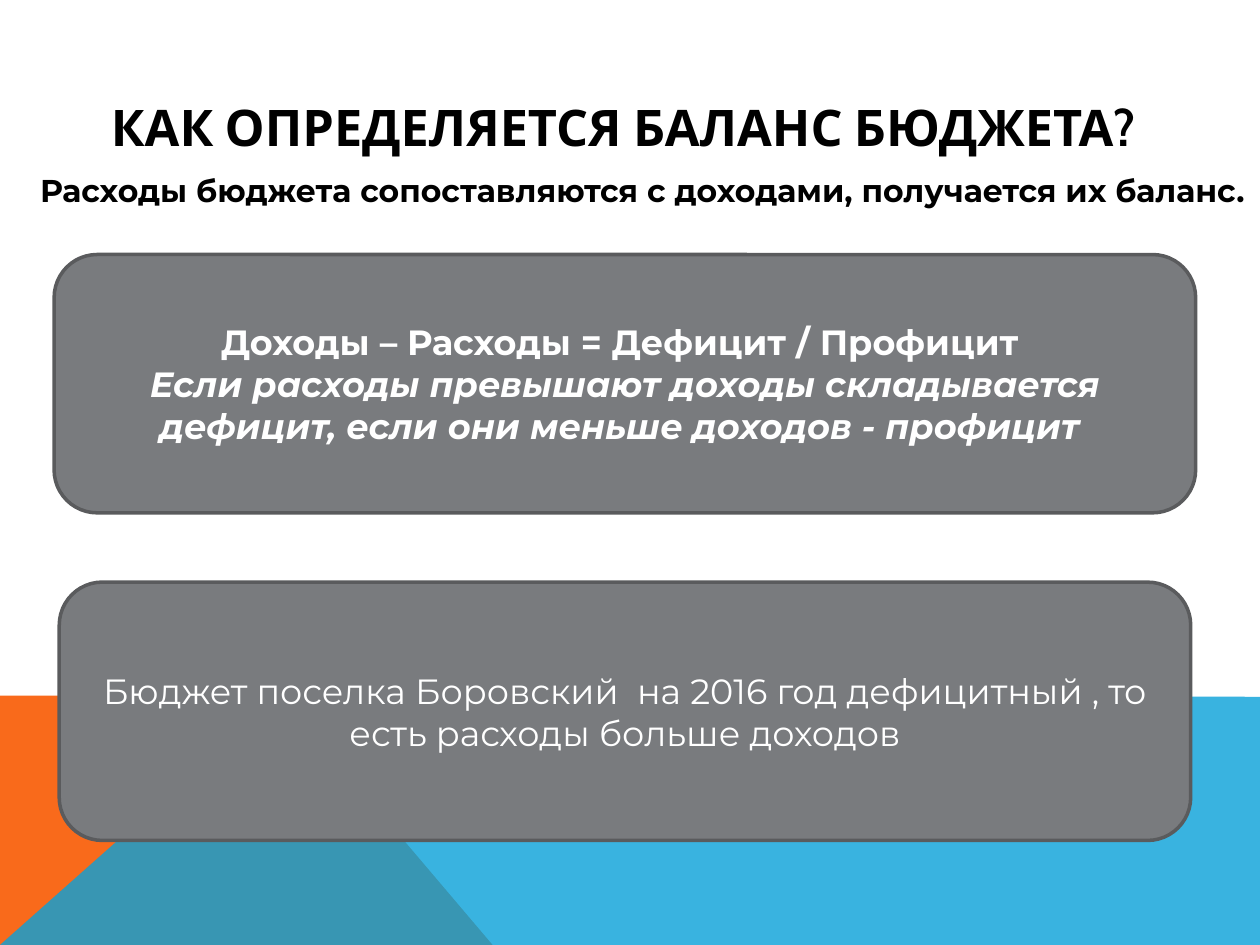
"""Build the slide on how the budget balance is determined."""
from dataclasses import dataclass

from lxml.etree import SubElement
from pptx import Presentation
from pptx.dml.color import RGBColor
from pptx.enum.shapes import MSO_SHAPE
from pptx.enum.text import MSO_ANCHOR, PP_ALIGN
from pptx.oxml.ns import qn
from pptx.slide import Slide
from pptx.text.text import TextFrame
from pptx.util import Inches, Pt

BLACK = RGBColor(0x00, 0x00, 0x00)
WHITE = RGBColor(0xFF, 0xFF, 0xFF)
ORANGE = RGBColor(0xF9, 0x6A, 0x1B)
BLUE = RGBColor(0x08, 0xA1, 0xD9)
GRAY = RGBColor(0x79, 0x7B, 0x7E)
EDGE = RGBColor(0x5A, 0x5B, 0x5D)


@dataclass
class Line:
    text: str
    size: float = 20
    color: RGBColor = WHITE
    bold: bool = False
    italic: bool = False
    font: str = "Montserrat"


@dataclass
class Band:
    points: list[tuple[float, float]]
    color: RGBColor
    alpha: int = 100


@dataclass
class Card:
    left: float
    top: float
    width: float
    lines: list[Line]
    height: float = 2.05


BANDS = [
    Band([(0, 7.5), (0, 5.52), (2.23, 5.52), (3.91, 7.5)], ORANGE),
    Band([(0, 7.5), (2.23, 5.52), (10, 5.53), (10, 7.5)], BLUE, 80),
]
TITLE = Line("КАК ОПРЕДЕЛЯЕТСЯ БАЛАНС БЮДЖЕТА? ", 28.8, BLACK, True, font="Cabin")
LEAD = Line("Расходы бюджета сопоставляются с доходами, получается их баланс.",
            18, BLACK, True)
CARDS = [
    Card(0.43, 2.02, 9.06, [
        Line("Доходы – Расходы = Дефицит / Профицит ", bold=True),
        Line("Если расходы превышают доходы складывается дефицит, "
             "если они меньше доходов - профицит ", bold=True, italic=True),
    ]),
    Card(0.47, 4.62, 8.98, [
        Line("Бюджет поселка Боровский  на 2016 год дефицитный , "
             "то есть расходы больше доходов"),
    ]),
]


def write(frame: TextFrame, lines: list[Line], anchor: MSO_ANCHOR) -> None:
    frame.word_wrap = True
    frame.vertical_anchor = anchor
    for index, line in enumerate(lines):
        para = frame.add_paragraph() if index else frame.paragraphs[0]
        para.text = line.text
        para.alignment = PP_ALIGN.CENTER
        font = para.font
        font.name, font.size = line.font, Pt(line.size)
        font.bold, font.italic = line.bold, line.italic
        font.color.rgb = line.color


def draw_band(slide: Slide, band: Band) -> None:
    first, *rest = [(Inches(x), Inches(y)) for x, y in band.points]
    pen = slide.shapes.build_freeform(*first)
    pen.add_line_segments(rest, close=True)
    shape = pen.convert_to_shape()
    shape.shadow.inherit = False
    shape.line.fill.background()
    shape.fill.solid()
    shape.fill.fore_color.rgb = band.color
    if band.alpha < 100:
        color = shape.element.spPr.find(f"{qn('a:solidFill')}/{qn('a:srgbClr')}")
        SubElement(color, qn("a:alpha")).set("val", str(band.alpha * 1000))


def draw_title(slide: Slide) -> None:
    title = slide.shapes.title
    title.left, title.top = Inches(0.5), Inches(0.77)
    title.width, title.height = Inches(8.99), Inches(0.46)
    write(title.text_frame, [TITLE], MSO_ANCHOR.MIDDLE)
    title.element.getparent().append(title.element)


def draw_lead(slide: Slide) -> None:
    box = slide.shapes.add_textbox(Inches(0.2), Inches(1.31), Inches(9.8), Inches(0.71))
    write(box.text_frame, [LEAD], MSO_ANCHOR.TOP)


def draw_card(slide: Slide, card: Card) -> None:
    shape = slide.shapes.add_shape(
        MSO_SHAPE.ROUNDED_RECTANGLE, Inches(card.left), Inches(card.top),
        Inches(card.width), Inches(card.height))
    shape.shadow.inherit = False
    shape.fill.solid()
    shape.fill.fore_color.rgb = GRAY
    shape.line.color.rgb = EDGE
    shape.line.width = Pt(2)
    write(shape.text_frame, card.lines, MSO_ANCHOR.MIDDLE)


def main() -> None:
    deck = Presentation()
    deck.slide_width, deck.slide_height = Inches(10), Inches(7.5)
    slide = deck.slides.add_slide(deck.slide_layouts[5])
    for band in BANDS:
        draw_band(slide, band)
    draw_title(slide)
    draw_lead(slide)
    for card in CARDS:
        draw_card(slide, card)
    deck.save("out.pptx")


if __name__ == "__main__":
    main()
